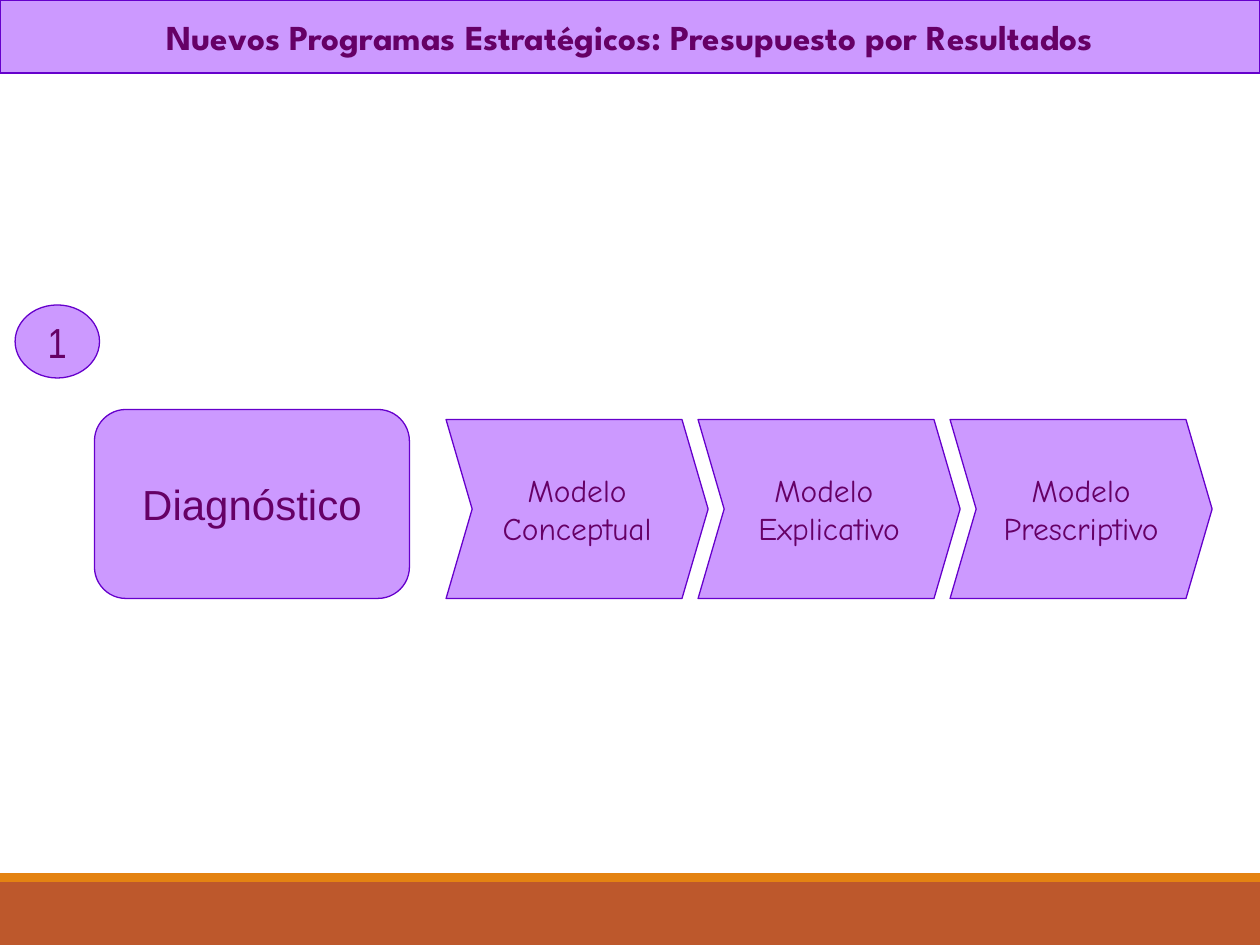
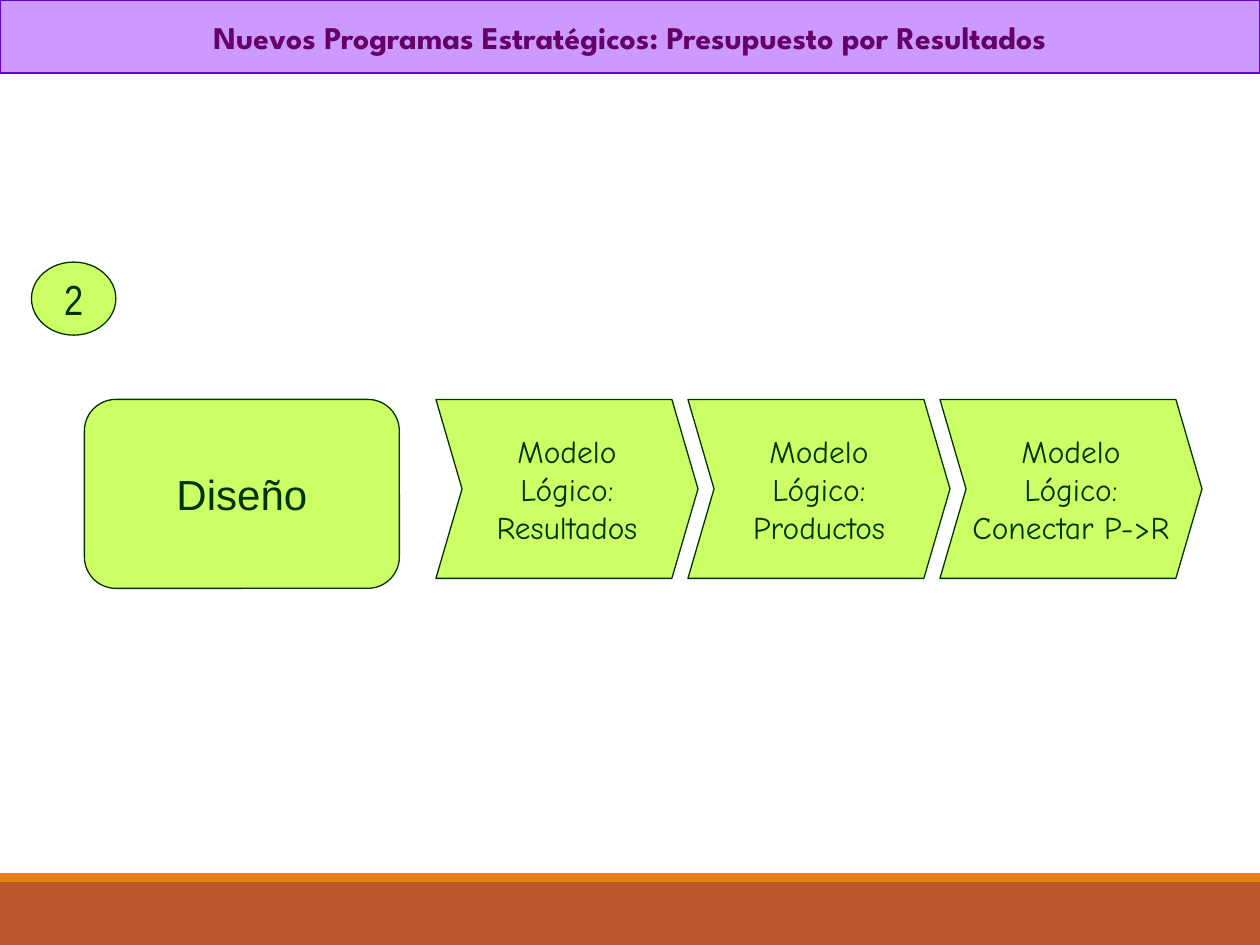
"""Build two slides that show the stages of a results-based budget."""
from dataclasses import dataclass

from pptx import Presentation
from pptx.dml.color import RGBColor
from pptx.enum import shapes, text
from pptx.util import Inches, Pt

KIND = shapes.MSO_SHAPE
TITLE = "Nuevos Programas Estratégicos: Presupuesto por Resultados"
STEP = 2.0


@dataclass(frozen=True)
class Look:
    fill: str
    line: str
    ink: str


@dataclass(frozen=True)
class Face:
    name: str
    size: int
    bold: bool = False


@dataclass(frozen=True)
class Box:
    left: float
    top: float
    width: float
    height: float


@dataclass(frozen=True)
class Stage:
    look: Look
    title: Face
    badge: Box
    number: str
    card: Box
    name: str
    chain: Box
    models: tuple[tuple[str, ...], ...]


PURPLE = Look("CC99FF", "6600CC", "660066")
GREEN = Look("CCFF66", "003300", "003300")
CARD = Face("Arial", 24)
BADGE = Face("Arial Narrow", 24)
MODEL = Face("Comic Neue", 18)
HEAD = Box(0, 0, 10, 0.58)
BANDS = (("BD582C", Box(0, 7, 10, 0.5)), ("E48312", Box(0, 6.93, 10, 0.07)))

STAGES = (
    Stage(PURPLE, Face("League Spartan", 20, True),
          Box(0.12, 2.42, 0.67, 0.58), "1",
          Box(0.75, 3.25, 2.5, 1.5), "Diagnóstico",
          Box(3.54, 3.33, 2.08, 1.42),
          (("Modelo", "Conceptual"), ("Modelo ", "Explicativo"),
           ("Modelo", "Prescriptivo"))),
    Stage(GREEN, Face("League Spartan", 18, True),
          Box(0.25, 2.08, 0.67, 0.58), "2",
          Box(0.67, 3.17, 2.5, 1.5), "Diseño",
          Box(3.46, 3.17, 2.08, 1.42),
          (("Modelo", "Lógico:", "Resultados"),
           ("Modelo", "Lógico:", "Productos"),
           ("Modelo", "Lógico:", "Conectar P->R"))),
)


def tint(code: str) -> RGBColor:
    """Turn a hex string into a colour."""
    return RGBColor.from_string(code)


def shape(slide, kind, box: Box, fill: str):
    """Add a flat filled shape without an outline."""
    item = slide.shapes.add_shape(
        kind, Inches(box.left), Inches(box.top),
        Inches(box.width), Inches(box.height))
    item.shadow.inherit = False
    item.fill.solid()
    item.fill.fore_color.rgb = tint(fill)
    item.line.fill.background()
    return item


def label(slide, kind, box: Box, look: Look, face: Face, *lines: str):
    """Add an outlined shape with centred lines of text."""
    item = shape(slide, kind, box, look.fill)
    item.line.color.rgb = tint(look.line)
    item.line.width = Pt(0.75)
    frame = item.text_frame
    frame.word_wrap = False
    frame.vertical_anchor = text.MSO_ANCHOR.MIDDLE
    for i, line in enumerate(lines):
        para = frame.add_paragraph() if i else frame.paragraphs[0]
        para.alignment = text.PP_ALIGN.CENTER
        run = para.add_run()
        run.text = line
        run.font.name = face.name
        run.font.size = Pt(face.size)
        run.font.bold = face.bold
        run.font.color.rgb = tint(look.ink)
    return item


def draw(slide, stage: Stage) -> None:
    """Draw one stage with its bands, card, badge, models and title."""
    for fill, box in BANDS:
        shape(slide, KIND.RECTANGLE, box, fill)
    look = stage.look
    label(slide, KIND.ROUNDED_RECTANGLE, stage.card, look, CARD, stage.name)
    label(slide, KIND.OVAL, stage.badge, look, BADGE, stage.number)
    first = stage.chain
    for i, lines in enumerate(stage.models):
        box = Box(first.left + i * STEP, first.top, first.width, first.height)
        link = label(slide, KIND.CHEVRON, box, look, MODEL, *lines)
        link.adjustments[0] = 0.146
    label(slide, KIND.RECTANGLE, HEAD, PURPLE, stage.title, TITLE)


def main() -> None:
    """Build and save the deck."""
    deck = Presentation()
    deck.slide_width = Inches(10)
    deck.slide_height = Inches(7.5)
    for stage in STAGES:
        draw(deck.slides.add_slide(deck.slide_layouts[6]), stage)
    deck.save("out.pptx")


if __name__ == "__main__":
    main()
